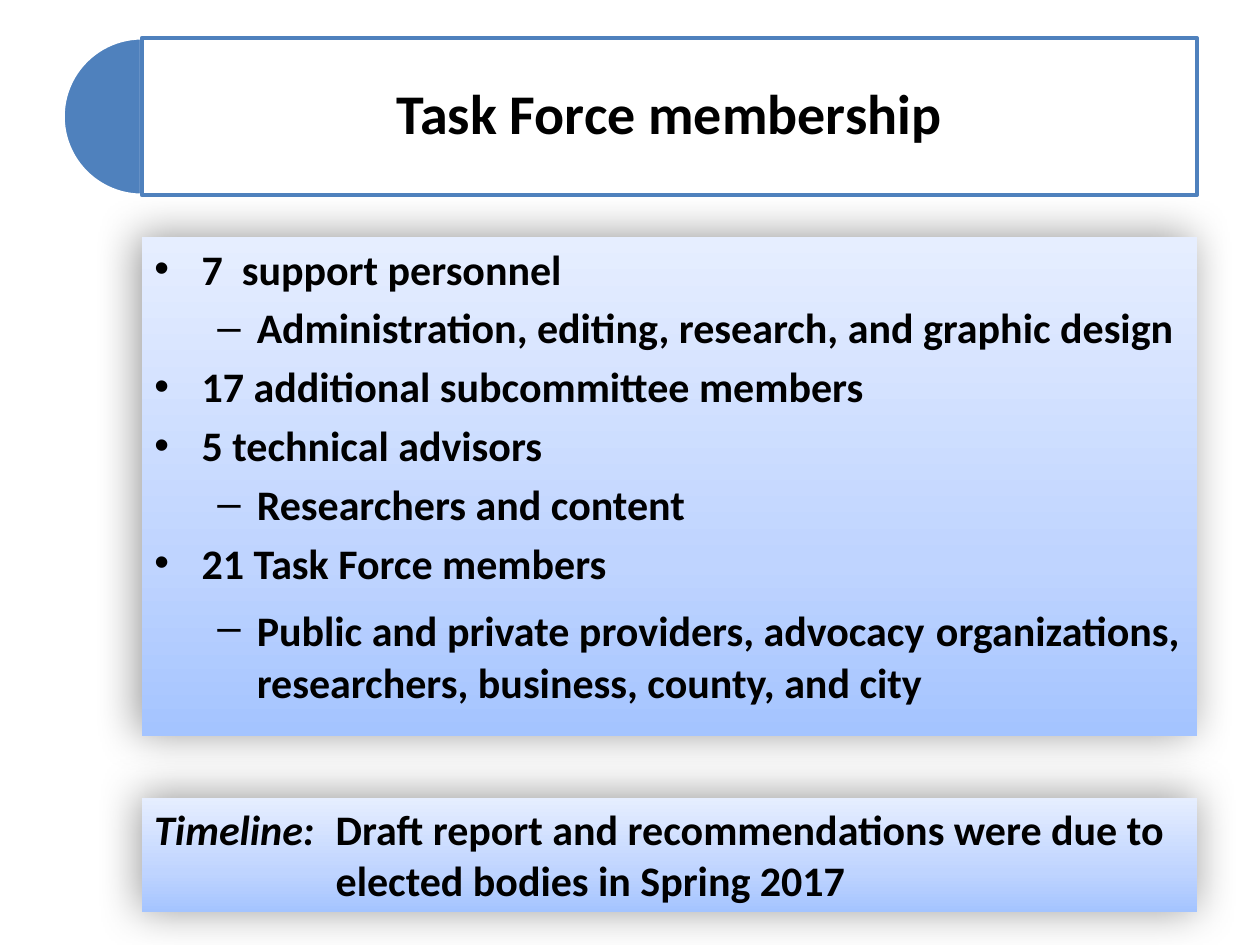
from lxml.etree import SubElement
from pptx import Presentation
from pptx.dml.color import RGBColor
from pptx.enum.shapes import MSO_SHAPE
from pptx.enum.text import MSO_ANCHOR, MSO_AUTO_SIZE, PP_ALIGN
from pptx.oxml.ns import qn
from pptx.util import Inches, Pt

TITLE = "Task Force membership"
POINTS = [
    (0, ["7  support personnel"]),
    (1, ["Administration, editing, research, and graphic design"]),
    (0, ["17 additional subcommittee members"]),
    (0, ["5 technical advisors"]),
    (1, ["Researchers and content"]),
    (0, ["21 Task Force members"]),
    (1, ["Public and private providers, advocacy", " ",
         "organizations, researchers, business, county, and city"]),
]
LABEL = "Timeline:"
DUE = "Draft report and recommendations were due to elected bodies in Spring 2017"

BLUE, WHITE, BLACK = "4F81BD", "FFFFFF", "000000"
STOPS = [(0, "A4C4FF"), (35, "BFD4FF"), (100, "E6EEFF")]
LEFT, WIDTH = 1.125, 8.375
TOP, HEAD = 0.3, 1.25


def color(code):
    return RGBColor.from_string(code)


def place(shape, top, height, left=LEFT, width=WIDTH):
    shape.left, shape.top = Inches(left), Inches(top)
    shape.width, shape.height = Inches(width), Inches(height)


def paint(shape, fill, line):
    shape.fill.solid()
    shape.fill.fore_color.rgb = color(fill)
    shape.line.color.rgb = color(line)
    shape.line.width = Pt(2)
    shape.shadow.inherit = False


def style(font, size=24):
    font.name, font.size, font.bold = "Calibri", Pt(size), True
    font.color.rgb = color(BLACK)


def add_hex(parent, code):
    return SubElement(parent, qn("a:srgbClr"), val=code)


def panel(shape, angle):
    """Give a box the blue gradient and a soft shadow thrown at angle."""
    shape.fill.gradient()
    shape.fill.gradient_angle = 90
    stops = shape._element.spPr.find(".//" + qn("a:gsLst"))
    for old in list(stops):
        stops.remove(old)
    for share, code in STOPS:
        add_hex(SubElement(stops, qn("a:gs"), pos=str(share * 1000)), code)
    shape.line.fill.background()
    shape.shadow.inherit = False
    effects = shape._element.spPr.find(qn("a:effectLst"))
    shade = SubElement(effects, qn("a:outerShdw"), blurRad=str(Pt(25)),
                       dist=str(Pt(3)), dir=str(angle * 60000), rotWithShape="0")
    SubElement(add_hex(shade, BLACK), qn("a:alpha"), val="40000")


def add_title(slide):
    title = slide.shapes.title
    place(title, TOP, HEAD)
    paint(title, WHITE, BLUE)
    frame = title.text_frame
    frame.text = TITLE
    frame.auto_size = MSO_AUTO_SIZE.NONE
    frame.vertical_anchor = MSO_ANCHOR.MIDDLE
    para = frame.paragraphs[0]
    para.alignment, para.line_spacing = PP_ALIGN.CENTER, 0.9
    style(para.font, 32)


def add_pie(slide):
    pie = slide.shapes.add_shape(MSO_SHAPE.PIE, 0, 0, 0, 0)
    place(pie, TOP, HEAD, LEFT - HEAD / 2, HEAD)
    pie.adjustments[0], pie.adjustments[1] = 54, 162
    paint(pie, BLUE, WHITE)
    slide.shapes._spTree.insert(2, pie._element)


def add_list(slide):
    body = slide.placeholders[1]
    place(body, 1.88, 3.96)
    panel(body, 200)
    frame = body.text_frame
    frame.auto_size = MSO_AUTO_SIZE.NONE
    for i, (level, parts) in enumerate(POINTS):
        para = frame.add_paragraph() if i else frame.paragraphs[0]
        para.level = level
        style(para.font)
        for part in parts:
            run = para.add_run()
            run.text = part
            if part == " ":
                run.font.size = Pt(28)


def add_due(slide):
    box = slide.shapes.add_textbox(0, 0, 0, 0)
    place(box, 6.33, 0.91)
    panel(box, 225)
    frame = box.text_frame
    frame.word_wrap = True
    frame.auto_size = MSO_AUTO_SIZE.SHAPE_TO_FIT_TEXT
    para = frame.paragraphs[0]
    hang = Inches(1.44)
    props = para._p.get_or_add_pPr()
    props.set("marL", str(hang))
    props.set("indent", str(-hang))
    style(para.font)
    for text, slant in [(LABEL, True), ("\t" + DUE, False)]:
        run = para.add_run()
        run.text, run.font.italic = text, slant


def main():
    deck = Presentation()
    deck.slide_width, deck.slide_height = Inches(10), Inches(7.5)
    slide = deck.slides.add_slide(deck.slide_layouts[1])
    add_title(slide)
    add_pie(slide)
    add_list(slide)
    add_due(slide)
    deck.save("out.pptx")


if __name__ == "__main__":
    main()
